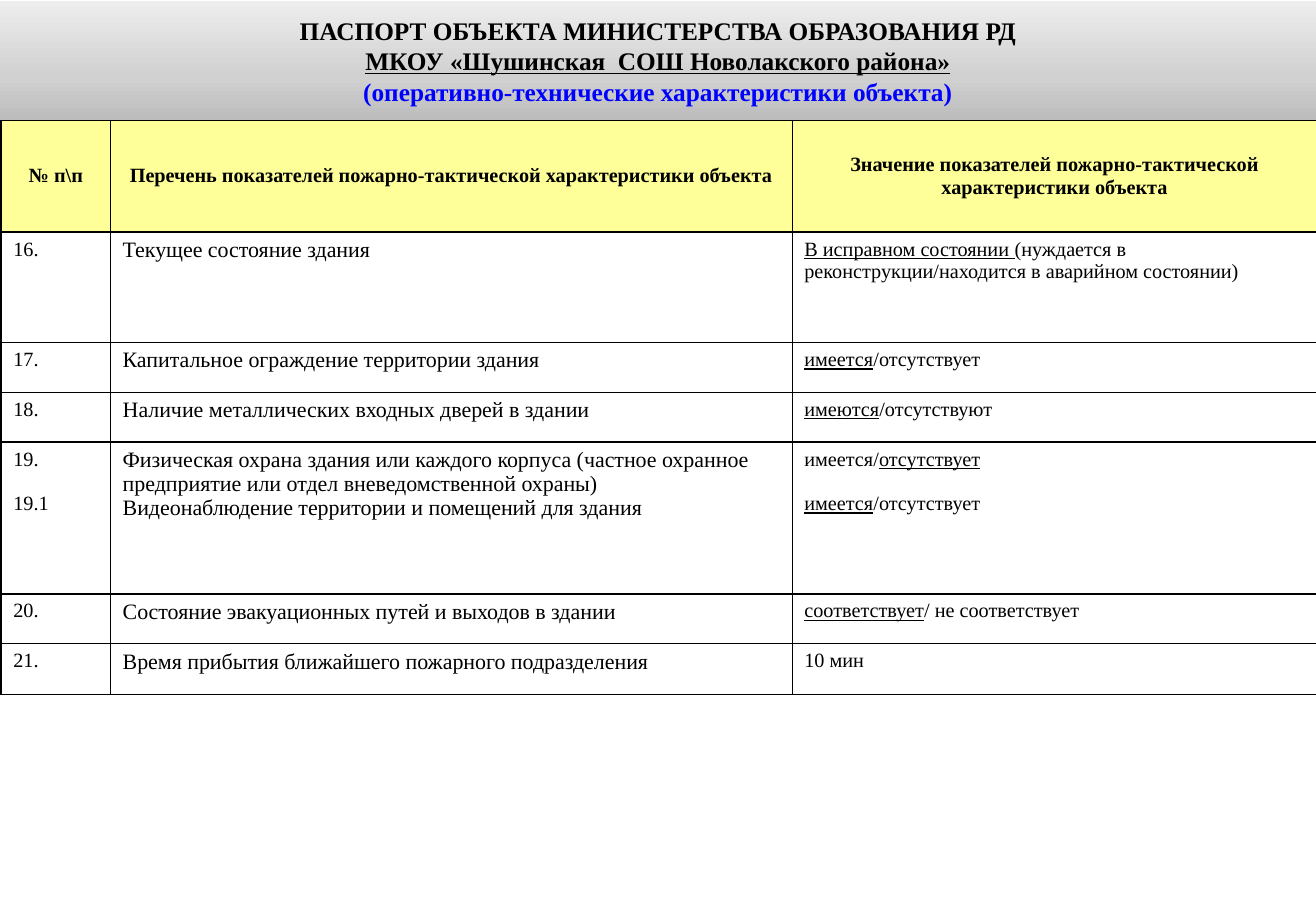
from pptx import Presentation
from pptx.dml.color import RGBColor
from pptx.enum.shapes import MSO_SHAPE
from pptx.enum.text import MSO_ANCHOR, PP_ALIGN
from pptx.oxml import parse_xml
from pptx.oxml.ns import nsdecls, qn
from pptx.util import Inches, Pt
from copy import deepcopy

FONT = "Times New Roman"
HUES = {"ink": "000000", "blue": "0000FF", "head": "FFFF99", "page": "FFFFFF",
        "low": "BCBCBC", "mid": "D0D0D0", "top": "EDEDED"}
HUES = {name: RGBColor.from_string(code) for name, code in HUES.items()}


def write(para, text, size, bold=False, hue="ink"):
    for order, part in enumerate(text.split("_")):
        if part:
            run = para.add_run()
            run.text = part
            run.font.name = FONT
            run.font.size = Pt(size)
            run.font.bold = bold
            run.font.underline = order % 2 == 1
            run.font.color.rgb = HUES[hue]


deck = Presentation()
deck.slide_width, deck.slide_height = Inches(10.83), Inches(7.5)
slide = deck.slides.add_slide(deck.slide_layouts[6])

band = slide.shapes.add_shape(MSO_SHAPE.RECTANGLE, 0, Inches(0.01),
                              deck.slide_width, Inches(0.98))
band.shadow.inherit = False
band.line.fill.background()
band.fill.gradient()
band.fill.gradient_angle = 90
stops = band.element.spPr.find(qn("a:gradFill")).find(qn("a:gsLst"))
stops.append(deepcopy(stops[0]))
for stop, place, hue in zip(band.fill.gradient_stops, (0, 0.35, 1), ("low", "mid", "top")):
    stop.position = place
    stop.color.rgb = HUES[hue]

frame = band.text_frame
frame.word_wrap = True
frame.vertical_anchor = MSO_ANCHOR.MIDDLE
frame.margin_left = frame.margin_right = Inches(0.09)
titles = [("ПАСПОРТ ОБЪЕКТА МИНИСТЕРСТВА ОБРАЗОВАНИЯ РД", "ink"),
          ("_МКОУ «Шушинская  СОШ Новолакского района»_", "ink"),
          ("(оперативно-технические характеристики объекта)", "blue")]
for order, (text, hue) in enumerate(titles):
    para = frame.add_paragraph() if order else frame.paragraphs[0]
    para.alignment = PP_ALIGN.CENTER
    write(para, text, 15, True, hue)

rows = [
    (["№ п\\п"], ["Перечень показателей пожарно-тактической характеристики объекта"],
     ["Значение показателей пожарно-тактической характеристики объекта"]),
    (["16."], ["Текущее состояние здания"],
     ["_В исправном состоянии _(нуждается в реконструкции/находится в аварийном состоянии)"]),
    (["17."], ["Капитальное ограждение территории здания"], ["_имеется_/отсутствует"]),
    (["18."], ["Наличие металлических входных дверей в здании"], ["_имеются_/отсутствуют"]),
    (["19.", "19.1"],
     ["Физическая охрана здания или каждого корпуса (частное охранное предприятие "
      "или отдел вневедомственной охраны)",
      "Видеонаблюдение территории и помещений для здания"],
     ["имеется/_отсутствует_", "_имеется_/отсутствует"]),
    (["20."], ["Состояние эвакуационных путей и выходов в здании"],
     ["_соответствует_/ не соответствует"]),
    (["21."], ["Время прибытия ближайшего пожарного подразделения"], ["10 мин"]),
]
widths = [0.9, 5.61, 4.32]
heights = [0.92, 0.91, 0.41, 0.41, 1.25, 0.41, 0.42]
table = slide.shapes.add_table(len(rows), len(widths), Inches(0.01), Inches(0.99),
                               Inches(sum(widths)), Inches(sum(heights))).table
table.first_row = table.horz_banding = False
for col, width in zip(table.columns, widths):
    col.width = Inches(width)
for row, height in zip(table.rows, heights):
    row.height = Inches(height)

for down, row in enumerate(rows):
    for across, lines in enumerate(row):
        cell = table.cell(down, across)
        head = down == 0
        size = 13 if across == 1 and not head else 12
        props = cell._tc.get_or_add_tcPr()
        for side in "LRTB":
            props.append(parse_xml(
                f'<a:ln{side} {nsdecls("a")} w="{Pt(1)}"><a:solidFill>'
                f'<a:srgbClr val="{HUES["ink"]}"/></a:solidFill></a:ln{side}>'))
        cell.fill.solid()
        cell.fill.fore_color.rgb = HUES["head" if head else "page"]
        cell.vertical_anchor = MSO_ANCHOR.MIDDLE if head else MSO_ANCHOR.TOP
        cell.margin_left = cell.margin_right = Inches(0.1)
        for order, text in enumerate(lines):
            para = cell.text_frame.add_paragraph() if order else cell.text_frame.paragraphs[0]
            para.alignment = PP_ALIGN.CENTER if head else PP_ALIGN.LEFT
            if order and across != 1:
                para.space_before = Pt(13)
            write(para, text, size, head)

deck.save("out.pptx")
